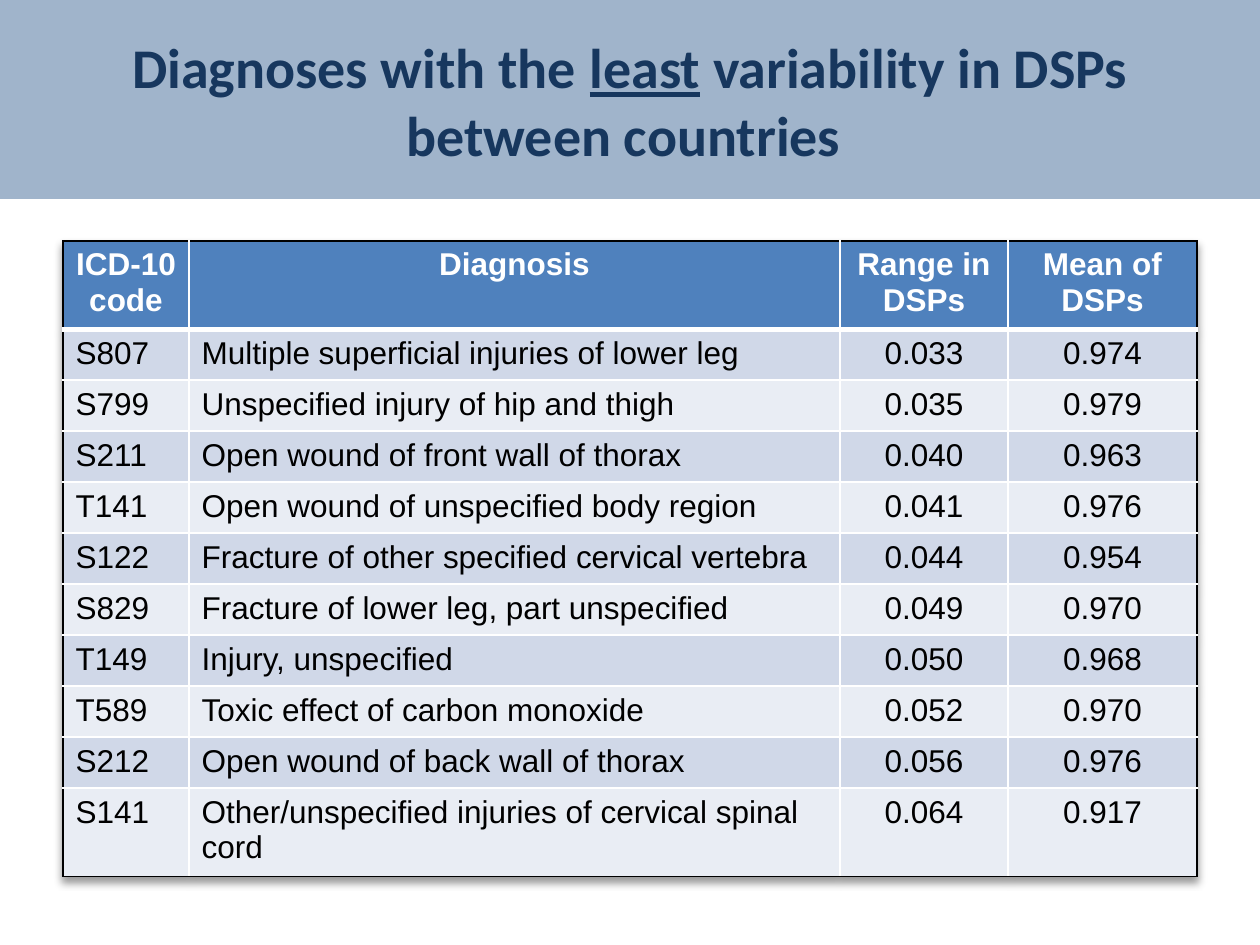
import pptx
import pptx.util
import pptx.dml.color
import pptx.enum.shapes
import pptx.enum.text
import pptx.oxml
import pptx.oxml.ns
from lxml import etree

TITLE = [("Diagnoses with the ", False), ("least", True),
         (" variability in DSPs between countries ", False)]
HEADER = ("ICD-10 code", "Diagnosis", "Range in DSPs", "Mean of DSPs")
DIAGNOSES = [
    ("S807", "Multiple superficial injuries of lower leg", "0.033", "0.974"),
    ("S799", "Unspecified injury of hip and thigh", "0.035", "0.979"),
    ("S211", "Open wound of front wall of thorax", "0.040", "0.963"),
    ("T141", "Open wound of unspecified body region", "0.041", "0.976"),
    ("S122", "Fracture of other specified cervical vertebra", "0.044", "0.954"),
    ("S829", "Fracture of lower leg, part unspecified", "0.049", "0.970"),
    ("T149", "Injury, unspecified", "0.050", "0.968"),
    ("T589", "Toxic effect of carbon monoxide", "0.052", "0.970"),
    ("S212", "Open wound of back wall of thorax", "0.056", "0.976"),
    ("S141", "Other/unspecified injuries of cervical spinal cord", "0.064", "0.917"),
]
COLORS = {"banner": "376092", "title": "17375E", "header": "4F81BD",
          "odd": "D0D8E8", "even": "E9EDF4", "white": "FFFFFF", "black": "000000"}
COLUMN_WIDTHS = (126, 651, 168, 189)
HEADER_HEIGHT, ROW_HEIGHT, LAST_HEIGHT = 83, 51, 83
CENTER = pptx.enum.text.PP_ALIGN.CENTER
LEFT = pptx.enum.text.PP_ALIGN.LEFT


def px(length):
    return pptx.util.Emu(round(length * 914400 / 126))


def rgb(name):
    return pptx.dml.color.RGBColor.from_string(COLORS[name])


def style(span, font, size, color, bold):
    span.font.name = font
    span.font.size = pptx.util.Pt(size)
    span.font.bold = bold
    span.font.color.rgb = rgb(color)


def add_banner(page):
    banner = page.shapes.add_shape(
        pptx.enum.shapes.MSO_SHAPE.RECTANGLE, 0, 0, px(1260), px(199))
    banner.shadow.inherit = False
    banner.fill.solid()
    banner.fill.fore_color.rgb = rgb("banner")
    banner.line.fill.background()
    color = banner.fill._xPr.find(".//" + pptx.oxml.ns.qn("a:srgbClr"))
    etree.SubElement(color, pptx.oxml.ns.qn("a:alpha"), val="47000")


def add_title(page):
    box = page.shapes.add_textbox(px(63), px(21), px(1134), px(158))
    frame = box.text_frame
    frame.word_wrap = True
    frame.vertical_anchor = pptx.enum.text.MSO_ANCHOR.MIDDLE
    para = frame.paragraphs[0]
    para.alignment = CENTER
    for text, underlined in TITLE:
        span = para.add_run()
        span.text = text
        style(span, "Calibri", 32, "title", True)
        span.font.underline = underlined


def set_borders(cell, borders):
    properties = cell._tc.get_or_add_tcPr()
    for index, (side, color, points) in enumerate(borders):
        properties.insert(index, pptx.oxml.parse_xml(
            f'<a:ln{side} {pptx.oxml.ns.nsdecls("a")} w="{pptx.util.Pt(points)}">'
            f'<a:solidFill><a:srgbClr val="{COLORS[color]}"/></a:solidFill>'
            f'</a:ln{side}>'))


def add_shadow(table):
    table._tbl.tblPr.insert(0, pptx.oxml.parse_xml(
        f'<a:effectLst {pptx.oxml.ns.nsdecls("a")}>'
        '<a:outerShdw blurRad="50800" dist="38100" dir="5400000" algn="t" rotWithShape="0">'
        '<a:srgbClr val="000000"><a:alpha val="40000"/></a:srgbClr>'
        '</a:outerShdw></a:effectLst>'))


def add_diagnosis_table(page):
    rows = [HEADER] + DIAGNOSES
    last_row, last_column = len(rows) - 1, len(HEADER) - 1
    heights = [HEADER_HEIGHT] + [ROW_HEIGHT] * (last_row - 1) + [LAST_HEIGHT]
    table = page.shapes.add_table(
        len(rows), len(HEADER), px(63), px(241),
        px(sum(COLUMN_WIDTHS)), px(sum(heights))).table
    add_shadow(table)
    for column, width in zip(table.columns, COLUMN_WIDTHS):
        column.width = px(width)
    for r, values in enumerate(rows):
        table.rows[r].height = px(heights[r])
        is_header = r == 0
        fill = "header" if is_header else "odd" if r % 2 else "even"
        for c, value in enumerate(values):
            cell = table.cell(r, c)
            cell.fill.solid()
            cell.fill.fore_color.rgb = rgb(fill)
            cell.text_frame.text = value
            para = cell.text_frame.paragraphs[0]
            para.alignment = CENTER if is_header or c > 1 else LEFT
            style(para.runs[0], "Arial", 18, "white" if is_header else "black", is_header)
            set_borders(cell, [
                ("L", "black" if c == 0 else "white", 1),
                ("R", "black" if c == last_column else "white", 1),
                ("T", "black" if is_header else "white", 3 if r == 1 else 1),
                ("B", "black" if r == last_row else "white", 3 if is_header else 1)])


def main():
    deck = pptx.Presentation()
    deck.slide_width, deck.slide_height = px(1260), px(945)
    page = deck.slides.add_slide(deck.slide_layouts[6])
    add_banner(page)
    add_title(page)
    add_diagnosis_table(page)
    deck.save("out.pptx")


if __name__ == "__main__":
    main()
